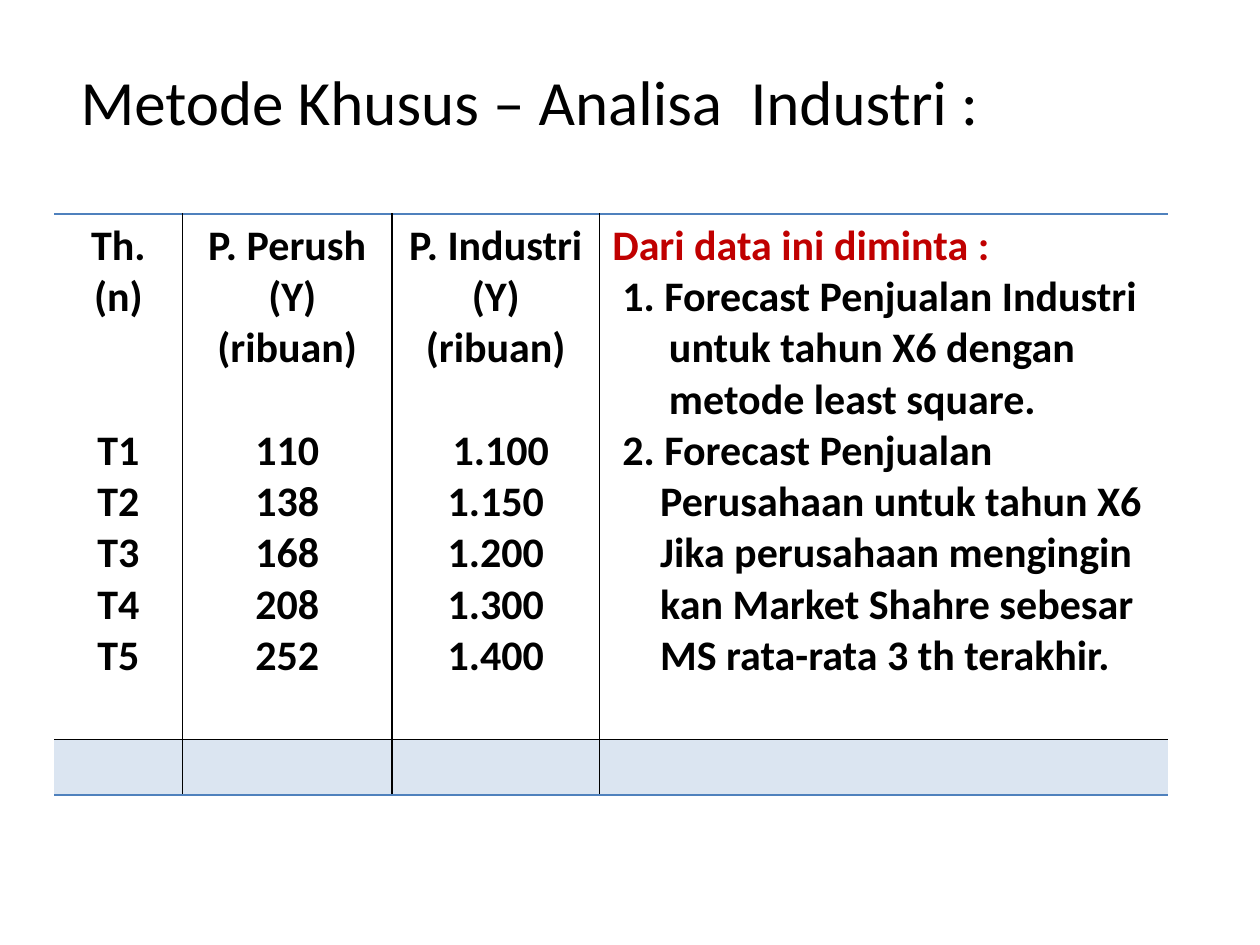
"""Build the industry analysis slide with its sales table."""
from dataclasses import dataclass

from lxml import etree
from pptx import Presentation
from pptx import util as u
from pptx.dml import color
from pptx.enum import text
from pptx.oxml import ns


@dataclass(frozen=True)
class Theme:
    """Colours, font and type sizes of the slide."""
    font: str = "Calibri"
    ink: str = "000000"
    accent: str = "C00000"
    blue: str = "4F81BD"
    tint: int = 20
    title_size: int = 36
    body_size: int = 24
    line_pitch: float = 29.3


THEME = Theme()
COLUMN_WIDTHS = (1.02, 1.66, 1.65, 4.51)
ROW_HEIGHTS = (4.17, 0.44)
SPACE = 0.08
DATA_COLUMNS = (
    (("Th.", "(n)"), ("T1", "T2", "T3", "T4", "T5")),
    (("P. Perush", "(Y)", "(ribuan)"), ("110", "138", "168", "208", "252")),
    (("P. Industri", "(Y)", "(ribuan)"),
     ("1.100", "1.150", "1.200", "1.300", "1.400")),
)
INDENTED = {(1, "(Y)"), (2, "1.100")}
TASKS = (
    (SPACE, "1. Forecast Penjualan Industri"),
    (0.45, "untuk tahun X6 dengan"),
    (0.45, "metode least square."),
    (SPACE, "2. Forecast Penjualan"),
    (0.38, "Perusahaan untuk tahun X6"),
    (0.38, "Jika perusahaan mengingin"),
    (0.38, "kan Market Shahre sebesar"),
    (0.38, "MS rata-rata 3 th terakhir."),
)


def write(para, words, size=THEME.body_size, ink=THEME.ink, bold=True,
          align=text.PP_ALIGN.CENTER, indent=0, before=0):
    """Write one formatted line into a paragraph."""
    para.alignment = align
    para.space_before = u.Pt(before)
    if indent:
        para._p.get_or_add_pPr().set("marL", str(u.Inches(indent)))
    span = para.add_run()
    span.text = words
    span.font.name = THEME.font
    span.font.size = u.Pt(size)
    span.font.bold = bold
    span.font.color.rgb = color.RGBColor.from_string(ink)


def next_para(frame):
    """Return the first paragraph while it is empty, else a new one."""
    first = frame.paragraphs[0]
    return frame.add_paragraph() if first.runs else first


def set_borders(cell, **inks):
    """Give the cell 1 pt borders on the named sides and none elsewhere."""
    properties = cell._tc.get_or_add_tcPr()
    for place, side in enumerate("LRTB"):
        line = etree.Element(ns.qn(f"a:ln{side}"), w=str(u.Pt(1)))
        ink = inks.get(side)
        fill = etree.SubElement(line, ns.qn("a:solidFill" if ink else "a:noFill"))
        if ink:
            etree.SubElement(fill, ns.qn("a:srgbClr"), val=ink)
        properties.insert(place, line)


def set_tint(cell):
    """Fill the cell with translucent blue."""
    cell.fill.solid()
    cell.fill.fore_color.rgb = color.RGBColor.from_string(THEME.blue)
    shade = cell._tc.tcPr.find(f".//{ns.qn('a:srgbClr')}")
    etree.SubElement(shade, ns.qn("a:alpha"), val=str(THEME.tint * 1000))


def add_title(page):
    """Place and write the slide title."""
    box = page.shapes.title
    box.left, box.top = u.Inches(0.43), u.Inches(0.44)
    box.width, box.height = u.Inches(9.13), u.Inches(0.71)
    frame = box.text_frame
    frame.margin_left = u.Inches(0.21)
    frame.vertical_anchor = text.MSO_ANCHOR.MIDDLE
    write(frame.paragraphs[0], "Metode Khusus – Analisa  Industri :",
          size=THEME.title_size, bold=False, align=text.PP_ALIGN.LEFT)


def add_grid(page):
    """Add the empty table with its sizes, fills and borders."""
    rows, columns = len(ROW_HEIGHTS), len(COLUMN_WIDTHS)
    table = page.shapes.add_table(
        rows, columns, u.Inches(0.43), u.Inches(1.7),
        u.Inches(sum(COLUMN_WIDTHS)), u.Inches(sum(ROW_HEIGHTS))).table
    table.first_row = table.horz_banding = False
    for column, width in zip(table.columns, COLUMN_WIDTHS):
        column.width = u.Inches(width)
    for r, height in enumerate(ROW_HEIGHTS):
        table.rows[r].height = u.Inches(height)
        for c in range(columns):
            cell = table.cell(r, c)
            if r:
                set_tint(cell)
            else:
                cell.fill.background()
            set_borders(cell,
                        L=THEME.ink if c else None,
                        R=THEME.ink if c < columns - 1 else None,
                        T=THEME.ink if r else THEME.blue,
                        B=THEME.blue if r else THEME.ink)
    return table


def fill_data(frame, number, heading, values):
    """Write a heading and its values, with values starting on line five."""
    gap = (4 - len(heading)) * THEME.line_pitch
    for place, words in enumerate(heading + values):
        write(next_para(frame), words,
              indent=SPACE if (number, words) in INDENTED else 0,
              before=gap if place == len(heading) else 0)


def fill_tasks(frame):
    """Write the red lead line and the indented tasks."""
    justify = text.PP_ALIGN.JUSTIFY
    write(next_para(frame), "Dari data ini diminta :", ink=THEME.accent,
          align=justify)
    for indent, words in TASKS:
        write(next_para(frame), words, align=justify, indent=indent)


def main():
    """Build and save the deck."""
    deck = Presentation()
    deck.slide_width, deck.slide_height = u.Inches(10), u.Inches(7.5)
    page = deck.slides.add_slide(deck.slide_layouts[5])
    add_title(page)
    table = add_grid(page)
    for number, (heading, values) in enumerate(DATA_COLUMNS):
        fill_data(table.cell(0, number).text_frame, number, heading, values)
    fill_tasks(table.cell(0, len(DATA_COLUMNS)).text_frame)
    deck.save("out.pptx")


if __name__ == "__main__":
    main()
